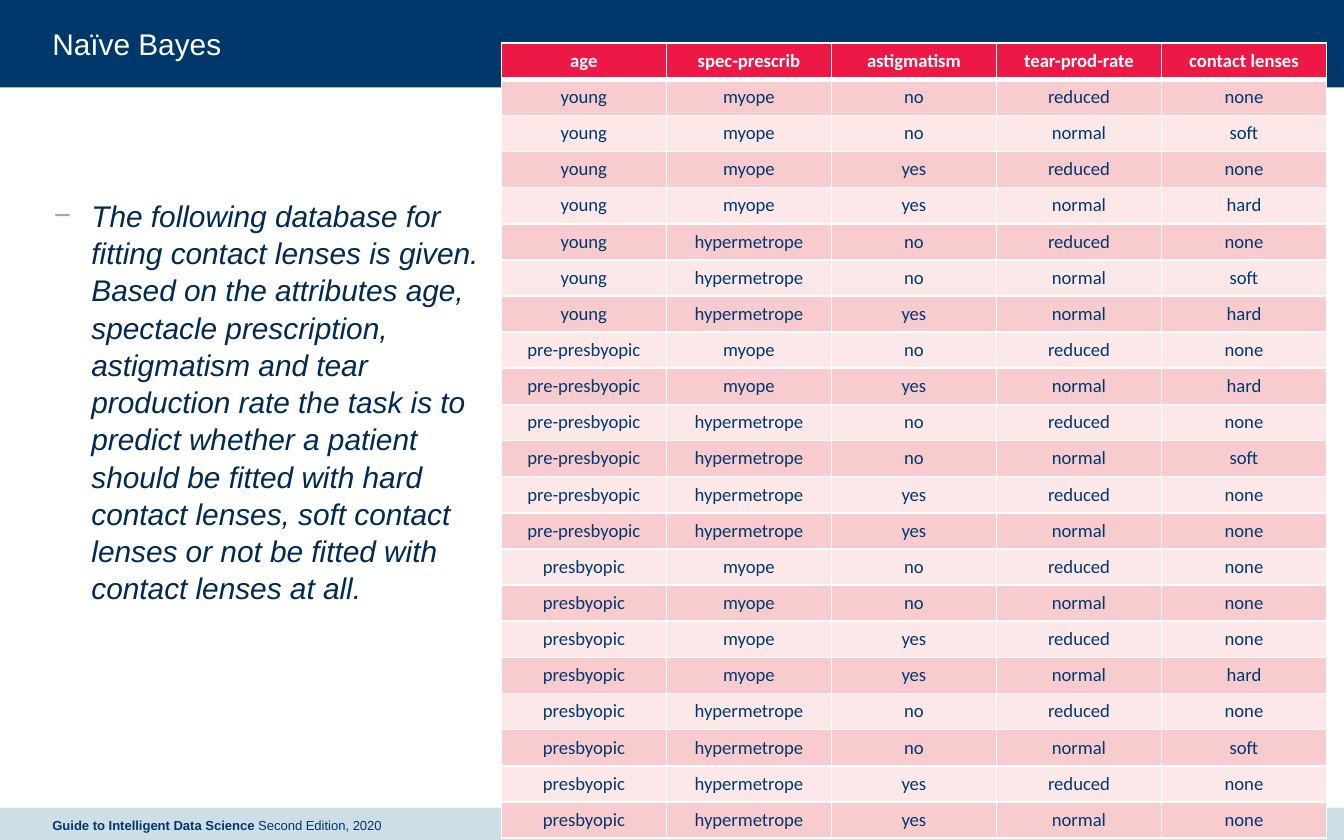
from itertools import chain, cycle

from lxml.etree import SubElement
from pptx import Presentation
from pptx.dml.color import RGBColor
from pptx.enum.shapes import MSO_SHAPE
from pptx.enum.text import MSO_ANCHOR, MSO_AUTO_SIZE, PP_ALIGN
from pptx.oxml.ns import qn
from pptx.util import Inches, Pt

TASK = (
    "The following database for fitting contact lenses is given. "
    "Based on the attributes age, spectacle prescription, astigmatism and tear "
    "production rate the task is to predict whether a patient should be fitted "
    "with hard contact lenses, soft contact lenses or not be fitted with "
    "contact lenses at all."
)
HEADER = ["age", "spec-prescrib", "astigmatism", "tear-prod-rate", "contact lenses"]
PATIENTS = """
young myope no reduced none
young myope no normal soft
young myope yes reduced none
young myope yes normal hard
young hypermetrope no reduced none
young hypermetrope no normal soft
young hypermetrope yes normal hard
pre-presbyopic myope no reduced none
pre-presbyopic myope yes normal hard
pre-presbyopic hypermetrope no reduced none
pre-presbyopic hypermetrope no normal soft
pre-presbyopic hypermetrope yes reduced none
pre-presbyopic hypermetrope yes normal none
presbyopic myope no reduced none
presbyopic myope no normal none
presbyopic myope yes reduced none
presbyopic myope yes normal hard
presbyopic hypermetrope no reduced none
presbyopic hypermetrope no normal soft
presbyopic hypermetrope yes reduced none
presbyopic hypermetrope yes normal none
"""


def colour(code):
    return RGBColor.from_string(code)


def write(para, text, size=16, font="Arial", ink="00386C", bold=False,
          italic=False, align=PP_ALIGN.LEFT):
    para.alignment = align
    span = para.add_run()
    span.text = text
    span.font.size, span.font.name = Pt(size), font
    span.font.bold, span.font.italic = bold, italic
    span.font.color.rgb = colour(ink)


class LectureSlide:
    """Style and current page; lengths are hundredths of the page's size."""

    NAVY, PALE, INK, DASH = "00386C", "CDDEE7", "002A51", "92AEBC"
    RED, ROSE, BLUSH, WHITE = "ED1846", "F8CCCF", "FCE8E9", "FFFFFF"
    MARGIN = 3.9

    def __init__(self, deck):
        self.deck = deck
        self.page = deck.slides.add_slide(deck.slide_layouts[5])

    def place(self, left, top, width, height):
        across, down = self.deck.slide_width / 100, self.deck.slide_height / 100
        return [int(n) for n in (left * across, top * down, width * across, height * down)]

    def band(self, top, height, fill):
        shape = self.page.shapes.add_shape(
            MSO_SHAPE.RECTANGLE, *self.place(0, top, 100, height))
        shape.shadow.inherit = False
        shape.fill.solid()
        shape.fill.fore_color.rgb = colour(fill)
        shape.line.fill.background()

    def frame(self, box, anchor=MSO_ANCHOR.TOP):
        frame = box.text_frame
        frame.word_wrap, frame.auto_size = True, MSO_AUTO_SIZE.NONE
        frame.vertical_anchor = anchor
        frame.margin_left = frame.margin_top = frame.margin_right = frame.margin_bottom = 0
        return frame.paragraphs[0]

    def title(self, text):
        box = self.page.shapes.title
        box.left, box.top, box.width, box.height = self.place(self.MARGIN, 3.04, 92.2, 4.32)
        box.element.getparent().append(box.element)  # in front of the bands
        write(self.frame(box), text, ink=self.WHITE)

    def text(self, area, **options):
        return self.frame(self.page.shapes.add_textbox(*self.place(*area)), **options)

    def bullet(self, area, text):
        para = self.text(area)
        para.space_before, para.line_spacing = Pt(7.5), 1.04
        write(para, text, ink=self.INK, italic=True)
        props = para._p.get_or_add_pPr()
        props.set("marL", str(Inches(0.29)))
        props.set("indent", str(Inches(-0.28)))
        SubElement(SubElement(props, qn("a:buClr")), qn("a:srgbClr"), val=self.DASH)
        SubElement(props, qn("a:buFont"), typeface="Arial")
        SubElement(props, qn("a:buChar"), char="−")

    def cell(self, cell, text, fill, top, bottom, **options):
        props = cell._tc.get_or_add_tcPr()
        for side, points in zip("LRTB", (1, 1, top, bottom)):
            line = SubElement(props, qn(f"a:ln{side}"), w=str(Pt(points)))
            SubElement(SubElement(line, qn("a:solidFill")), qn("a:srgbClr"), val=self.WHITE)
        cell.fill.solid()
        cell.fill.fore_color.rgb = colour(fill)
        write(cell.text_frame.paragraphs[0], text, size=10, font="Calibri",
              align=PP_ALIGN.CENTER, **options)

    def table(self, area, rows):
        table = self.page.shapes.add_table(len(rows), len(rows[0]), *self.place(*area)).table
        fills = chain([self.RED], cycle([self.ROSE, self.BLUSH]))
        for index, (row, fill) in enumerate(zip(rows, fills)):
            head = index == 0
            for column, text in enumerate(row):
                self.cell(table.cell(index, column), text, fill,
                          top=3 if index == 1 else 1, bottom=3 if head else 1,
                          ink=self.WHITE if head else self.NAVY, bold=head)


def main():
    deck = Presentation()
    deck.slide_width, deck.slide_height = Inches(10), Inches(6.25)
    slide = LectureSlide(deck)

    # Bands and title
    slide.band(0, 10.4, slide.NAVY)
    slide.band(96.16, 4.16, slide.PALE)
    slide.title("Naïve Bayes")

    # Task description
    slide.bullet((slide.MARGIN, 23.36, 31.9, 67.84), TASK)

    # Footer
    footer = slide.text((slide.MARGIN, 96.16, 43.9, 4.16), anchor=MSO_ANCHOR.MIDDLE)
    write(footer, "Guide to Intelligent Data Science ", size=7, bold=True)
    write(footer, "Second Edition, 2020", size=7)

    # Patient database
    patients = [line.split() for line in PATIENTS.strip().splitlines()]
    slide.table((37.3, 5.12, 61.4, 93.92), [HEADER, *patients])

    deck.save("out.pptx")


if __name__ == "__main__":
    main()
